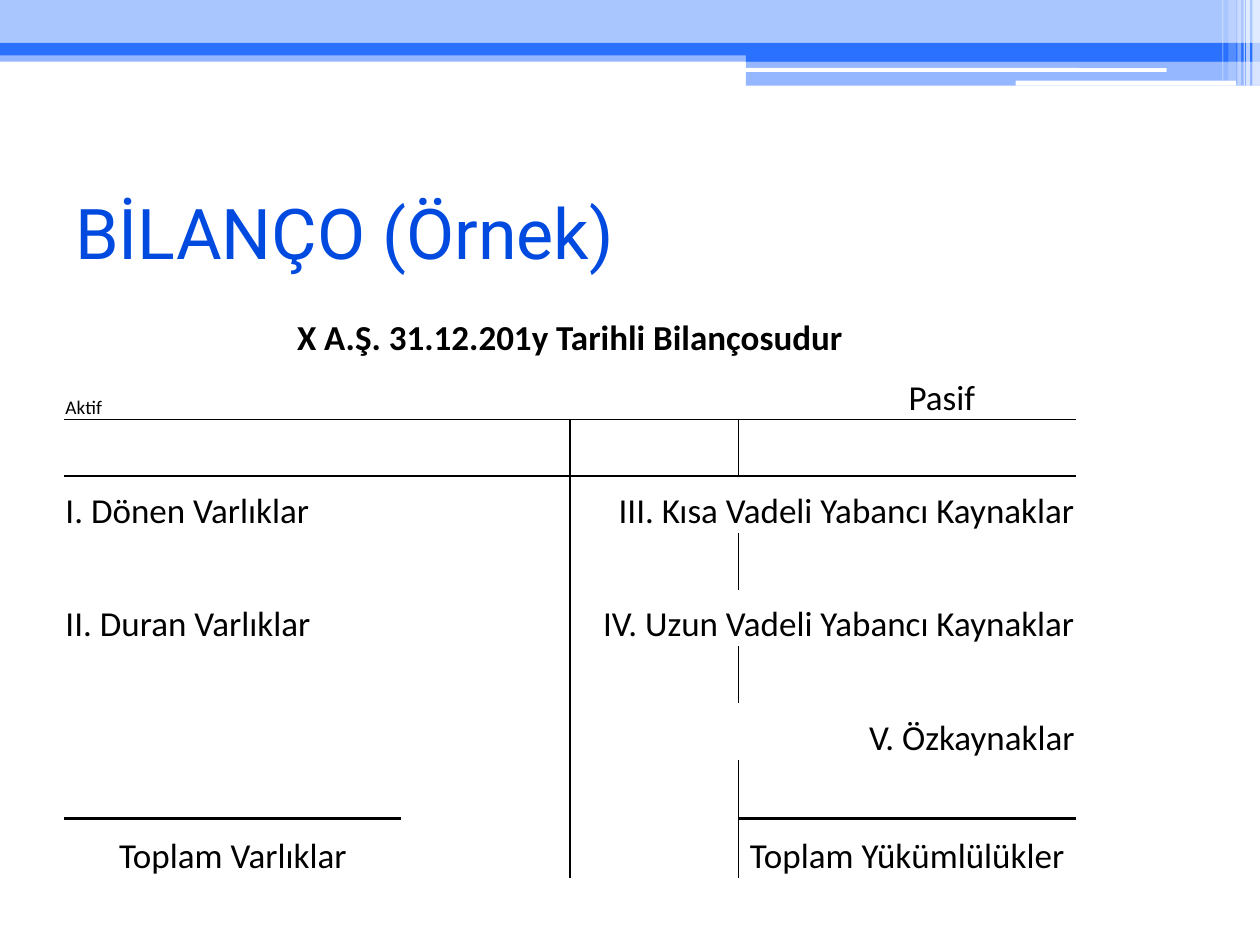
from lxml.etree import SubElement
from pptx import Presentation
from pptx.dml.color import RGBColor
from pptx.enum.shapes import MSO_SHAPE as Shape
from pptx.enum.text import MSO_ANCHOR as Anchor, PP_ALIGN as Align
from pptx.oxml import parse_xml
from pptx.oxml.ns import nsdecls, qn
from pptx.util import Inches, Pt

BLUE = RGBColor(0x2B, 0x71, 0xFF)
PALE = RGBColor(0xAA, 0xC6, 0xFF)
TITLE = RGBColor(0x00, 0x4A, 0xE0)
WHITE = RGBColor(0xFF, 0xFF, 0xFF)
BLACK = RGBColor(0x00, 0x00, 0x00)
NO_STYLE = "{2D5ABB26-0587-4C30-8999-92F81FD0307C}"

BARS = [
    (0, 0.4, 10, 0.09, BLUE, 50),
    (0, 0, 10, 0.34, PALE, 100),
    (0, 0.34, 10, 0.1, BLUE, 100),
    (5.92, 0.39, 4.08, 0.1, BLUE, 100),
    (5.92, 0.48, 4.08, 0.2, BLUE, 50),
]
RULES = [(5.91, 0.54, 3.35, 0.03), (8.06, 0.64, 1.75, 0.04)]
STRIPES = [
    (9.94, 0.06, 0.68, 65), (9.89, 0.03, 0.68, 65), (9.87, 0.01, 0.68, 60),
    (9.82, 0.03, 0.68, 40), (9.75, 0.06, 0.64, 20), (9.7, 0.01, 0.64, 30),
]
ENTRIES = [
    (0, 0, 6, "X A.Ş. 31.12.201y Tarihli Bilançosudur", Align.CENTER, 20, True),
    (1, 0, 1, "Aktif", Align.LEFT, 11, False),
    (1, 5, 1, "Pasif", Align.LEFT, 20, False),
    (3, 0, 3, "I. Dönen Varlıklar", Align.LEFT, 20, False),
    (3, 3, 3, "III. Kısa Vadeli Yabancı Kaynaklar", Align.RIGHT, 20, False),
    (5, 0, 3, "II. Duran Varlıklar", Align.LEFT, 20, False),
    (5, 3, 3, "IV. Uzun Vadeli Yabancı Kaynaklar", Align.RIGHT, 20, False),
    (7, 3, 3, "V. Özkaynaklar", Align.RIGHT, 20, False),
    (9, 0, 2, "Toplam Varlıklar", Align.CENTER, 20, False),
    (9, 4, 2, "Toplam Yükümlülükler", Align.CENTER, 20, False),
]
COLS = 6
ROW_HEIGHTS = [0.45, 0.47] + [0.45] * 6 + [0.47] * 2


def set_all(obj, values):
    for name, value in values.items():
        setattr(obj, name, value)


def add_bar(s, kind, box, color, opacity=100):
    sp = s.shapes.add_shape(kind, *map(Inches, box))
    sp.shadow.inherit = False
    sp.line.fill.background()
    sp.fill.solid()
    sp.fill.fore_color.rgb = color
    if opacity < 100:
        clr = sp.fill._xPr.find(qn("a:solidFill"))[0]
        SubElement(clr, qn("a:alpha")).set("val", str(opacity * 1000))


def add_header(s, left, top):
    for x, y, w, h, color, opacity in BARS:
        add_bar(s, Shape.RECTANGLE, (left + x, top + y, w, h), color, opacity)
    for x, y, w, h in RULES:
        add_bar(s, Shape.ROUNDED_RECTANGLE, (left + x, top + y, w, h), WHITE)
    for x, w, h, opacity in STRIPES:
        add_bar(s, Shape.RECTANGLE, (left + x, top, w, h), WHITE, opacity)


def write(tf, text, align, font):
    p = tf.paragraphs[0]
    p.alignment = align
    r = p.add_run()
    r.text = text
    set_all(r.font, {k: v for k, v in font.items() if k != "color"})
    r.font.color.rgb = font["color"]


def add_title(s, box):
    tf = s.shapes.add_textbox(*map(Inches, box)).text_frame
    set_all(tf, {"word_wrap": True, "vertical_anchor": Anchor.MIDDLE})
    write(tf, "BİLANÇO (Örnek)", Align.LEFT,
          {"name": "Roboto", "size": Pt(40), "color": TITLE})


def cell_borders(row, col):
    borders = {}
    if row >= 2 and col == 3:
        borders["L"] = 1
    if row >= 2 and col == 2:
        borders["R"] = 1
    outer = col not in (2, 3)
    if row == 2:
        borders["T"] = 1
    if row == 9 and outer:
        borders["T"] = 2
    if row == 1:
        borders["B"] = 1
    if row == 8 and outer:
        borders["B"] = 2
    return borders


def draw_borders(cell, borders):
    tc_pr = cell._tc.get_or_add_tcPr()
    for i, (side, width) in enumerate(borders.items()):
        tc_pr.insert(i, parse_xml(
            f'<a:ln{side} {nsdecls("a")} w="{Pt(width)}"><a:solidFill>'
            f'<a:srgbClr val="{BLACK}"/></a:solidFill></a:ln{side}>'))


def add_balance_sheet(s, box):
    tbl = s.shapes.add_table(len(ROW_HEIGHTS), COLS, *map(Inches, box)).table
    set_all(tbl, {"first_row": False, "horz_banding": False})
    tbl._tbl.tblPr.find(qn("a:tableStyleId")).text = NO_STYLE
    for column in tbl.columns:
        column.width = Inches(box[2] / COLS)
    for row, height in zip(tbl.rows, ROW_HEIGHTS):
        row.height = Inches(height)
    for i in range(len(ROW_HEIGHTS)):
        for j in range(COLS):
            cell = tbl.cell(i, j)
            cell.fill.background()
            draw_borders(cell, cell_borders(i, j))
    for i, j, span, text, align, size, bold in ENTRIES:
        cell = tbl.cell(i, j)
        if span > 1:
            cell.merge(tbl.cell(i, j + span - 1))
        set_all(cell, {
            "vertical_anchor": Anchor.BOTTOM,
            "margin_left": Inches(0.01), "margin_right": Inches(0.01),
            "margin_top": Inches(0.01), "margin_bottom": 0,
        })
        write(cell.text_frame, text, align,
              {"name": "Calibri", "size": Pt(size), "bold": bold, "color": BLACK})


def main():
    prs = Presentation()
    set_all(prs, {"slide_width": Inches(10), "slide_height": Inches(7.5)})
    s = prs.slides.add_slide(prs.slide_layouts[6])
    add_header(s, 0, 0)
    add_title(s, (0.5, 1.25, 9, 1.17))
    add_balance_sheet(s, (0.51, 2.41, 8.03, sum(ROW_HEIGHTS)))
    prs.save("out.pptx")


if __name__ == "__main__":
    main()
